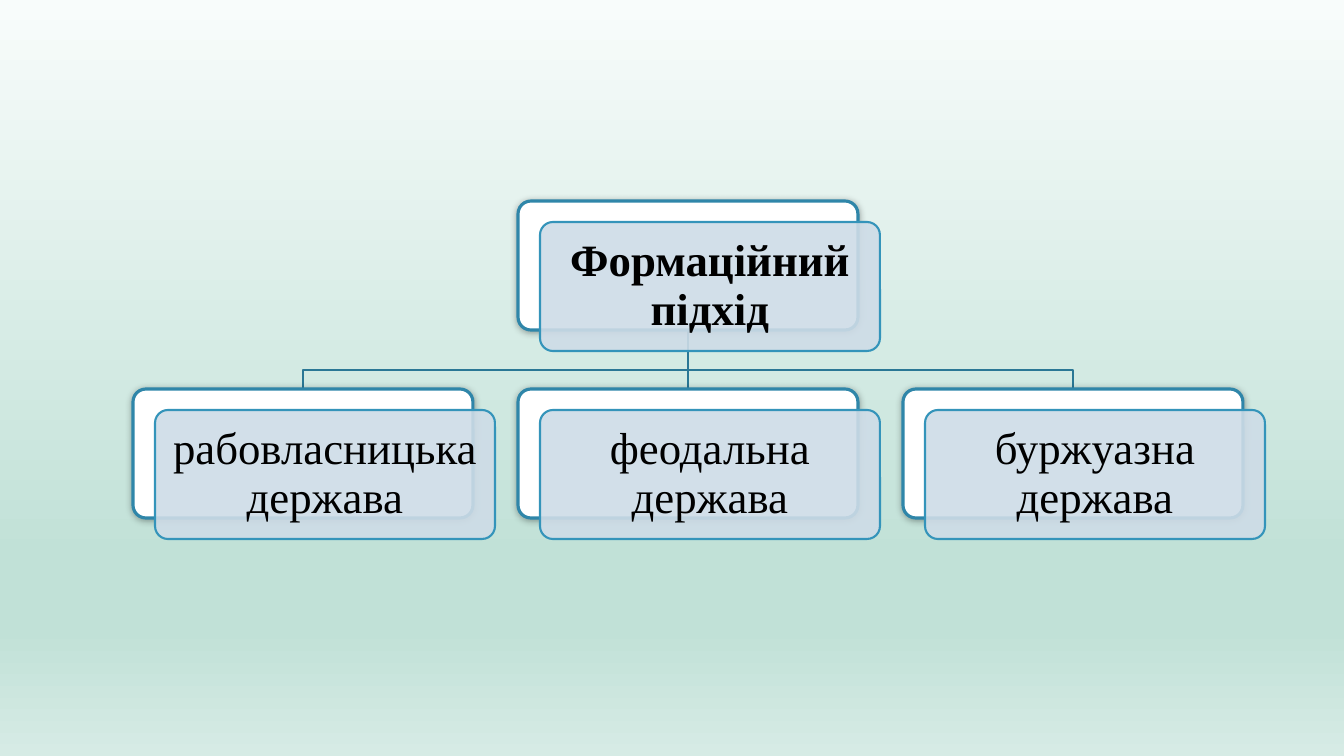
from lxml import etree
from pptx import Presentation
from pptx import util as u
from pptx.dml.color import RGBColor
from pptx.enum import shapes, text
from pptx.oxml.ns import qn

PX = 914400 / 100.8
COLORS = {
    "card": "FFFFFF", "card_line": "2F86A9", "label": "CEDCE7", "label_line": "3494BA",
    "link": "2A7795", "text": "000000",
}
BACKGROUND = [(0, "F8FCFB"), (74, "C1E1D7"), (83, "C1E1D7"), (100, "D6EBE5")]
CARD_W, CARD_H = 340, 129
LABEL_DX, LABEL_DY = 22, 21
ROOT_X, ROOT_Y = 518, 201
CHILD_Y, CHILD_STEP = 389, 385
BAR_Y = 370
CHILDREN = ["рабовласницька держава", "феодальна держава", "буржуазна держава"]


def px(n):
    return u.Emu(round(n * PX))


def sub(parent, tag, **attrs):
    return etree.SubElement(parent, qn(tag), {k: str(v) for k, v in attrs.items()})


class Deck:
    def __init__(self, width, height, font, size):
        self.prs = Presentation()
        self.prs.slide_width, self.prs.slide_height = px(width), px(height)
        self.s = self.prs.slides.add_slide(self.prs.slide_layouts[6])
        self.font, self.size = font, size

    def color(self, name):
        return RGBColor.from_string(COLORS[name])

    def background(self, stops):
        """Fill the slide with a gradient from top to bottom."""
        self.s.background.fill.gradient()
        stop_list = next(self.s.element.iter(qn("a:gsLst")))
        for old in list(stop_list):
            stop_list.remove(old)
        for pos, color in stops:
            sub(sub(stop_list, "a:gs", pos=pos * 1000), "a:srgbClr", val=color)
        next(self.s.element.iter(qn("a:lin"))).set("ang", "5400000")

    def line(self, sp, color, width):
        sp.line.color.rgb = self.color(color)
        sp.line.width = u.Pt(width)

    def box(self, x, y, fill, line, width):
        sp = self.s.shapes.add_shape(
            shapes.MSO_SHAPE.ROUNDED_RECTANGLE, px(x), px(y), px(CARD_W), px(CARD_H))
        sp.adjustments[0] = 0.1
        sp.shadow.inherit = False
        sp.fill.solid()
        sp.fill.fore_color.rgb = self.color(fill)
        self.line(sp, line, width)
        return sp

    def node(self, x, y, words, bold=False):
        """Draw a white card with a translucent label shifted over it."""
        card = self.box(x, y, "card", "card_line", 2.25)
        shadow = sub(card.element.spPr.find(qn("a:effectLst")), "a:outerShdw",
                     blurRad=u.Pt(5), dist=u.Pt(1), dir=5400000, algn="ctr", rotWithShape=0)
        sub(sub(shadow, "a:srgbClr", val="000000"), "a:alpha", val=32000)

        label = self.box(x + LABEL_DX, y + LABEL_DY, "label", "label_line", 1.5)
        fill = label.element.spPr.find(qn("a:solidFill"))
        sub(fill[0], "a:alpha", val=90000)
        tf = label.text_frame
        tf.word_wrap = True
        tf.vertical_anchor = text.MSO_ANCHOR.MIDDLE
        tf.margin_left = tf.margin_right = tf.margin_top = tf.margin_bottom = px(12)
        p = tf.paragraphs[0]
        p.alignment = text.PP_ALIGN.CENTER
        p.line_spacing = 0.9
        r = p.add_run()
        r.text = words
        r.font.name, r.font.size, r.font.bold = self.font, u.Pt(self.size), bold
        r.font.color.rgb = self.color("text")

    def link(self, x1, y1, x2, y2):
        """Join two points, with a bend at the shared bar if they are not aligned."""
        if x1 == x2:
            sp = self.s.shapes.add_connector(
                shapes.MSO_CONNECTOR.STRAIGHT, px(x1), px(y1), px(x2), px(y2))
            sub(sp.element.spPr, "a:effectLst")
        else:
            path = self.s.shapes.build_freeform(x1, y1, scale=PX)
            path.add_line_segments([(x1, BAR_Y), (x2, BAR_Y), (x2, y2)], close=False)
            sp = path.convert_to_shape()
            sp.fill.background()
            sp.shadow.inherit = False
        self.line(sp, "link", 1.5)


def main():
    deck = Deck(1344, 756, "Times New Roman", 32)
    deck.background(BACKGROUND)
    child_xs = [ROOT_X + (i - 1) * CHILD_STEP for i in range(len(CHILDREN))]
    half = CARD_W // 2
    for x in child_xs:
        deck.link(ROOT_X + half, ROOT_Y + CARD_H, x + half, CHILD_Y)
    deck.node(ROOT_X, ROOT_Y, "Формаційний підхід", bold=True)
    for x, words in zip(child_xs, CHILDREN):
        deck.node(x, CHILD_Y, words)
    deck.prs.save("out.pptx")


if __name__ == "__main__":
    main()
